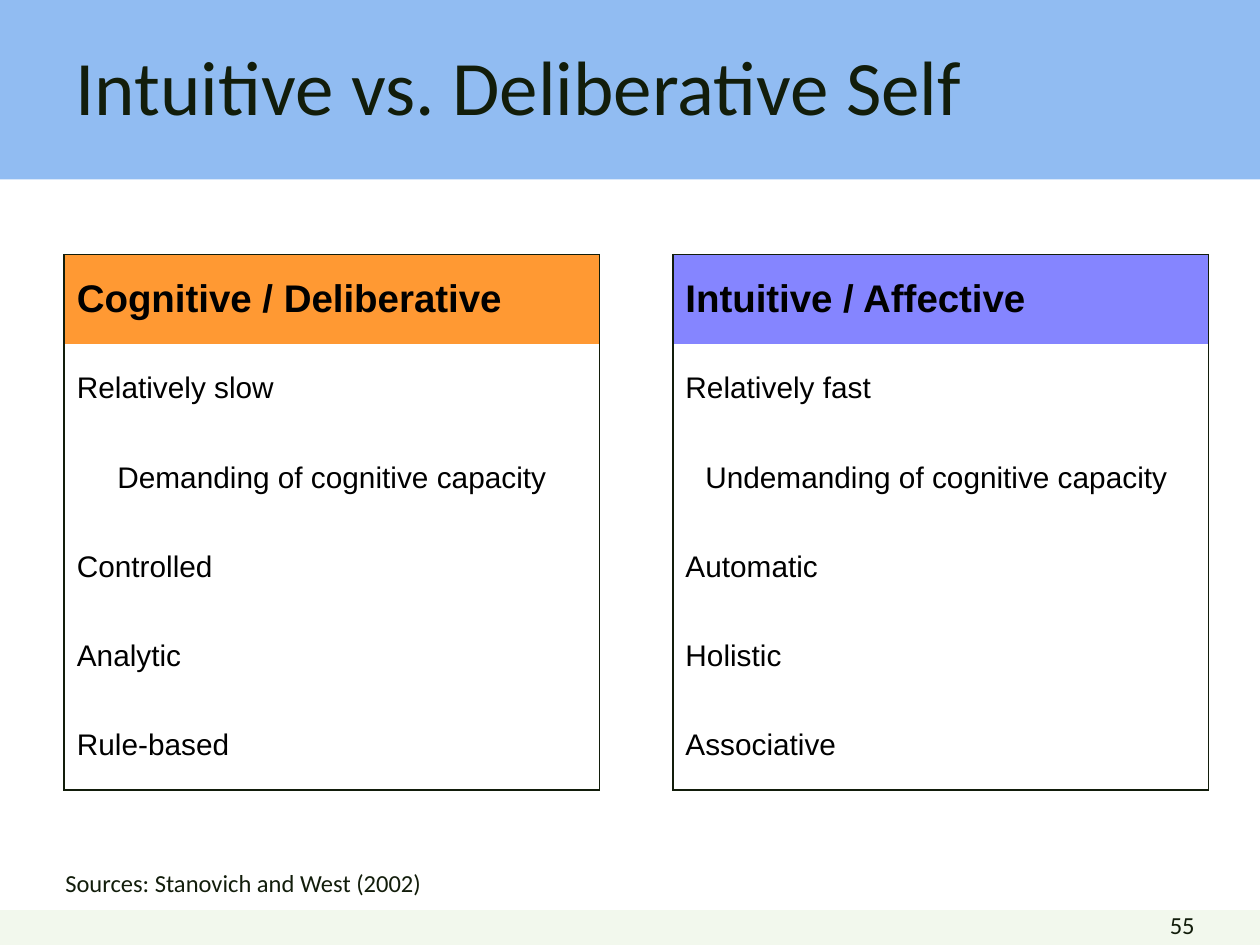
from lxml.etree import SubElement
from pptx import Presentation
from pptx.dml.color import RGBColor
from pptx.enum.shapes import MSO_SHAPE
from pptx.enum.text import MSO_ANCHOR, PP_ALIGN
from pptx.oxml import parse_xml
from pptx.oxml.ns import nsdecls, qn
from pptx.util import Inches, Pt

INK = "121D0B"


def paint(fill, color):
    fill.solid()
    fill.fore_color.rgb = RGBColor.from_string(color)


def style(tf, size, font="Calibri", color=INK, align=PP_ALIGN.LEFT, bold=False):
    p = tf.paragraphs[0]
    p.alignment = align
    r = p.runs[0]
    r.font.size, r.font.name, r.font.bold = Pt(size), font, bold
    paint(r.font.fill, color)


prs = Presentation()
prs.slide_width, prs.slide_height = Inches(10), Inches(7.5)
W, H = prs.slide_width, prs.slide_height
s = prs.slides.add_slide(prs.slide_layouts[5])

for top, height, color in [(0, 0.19, "91BCF2"), (0.963, 0.037, "F2F8ED")]:
    sp = s.shapes.add_shape(MSO_SHAPE.RECTANGLE, 0, int(H * top), W, int(H * height))
    sp.shadow.inherit = False
    paint(sp.fill, color)
    sp.line.fill.background()

title = s.shapes.title
title.left, title.top, title.width, title.height = map(Inches, (0.5, 0.28, 9.07, 0.79))
title.text_frame.text = "Intuitive vs. Deliberative Self"
title.text_frame.vertical_anchor = MSO_ANCHOR.MIDDLE
style(title.text_frame, 44)
title.element.getparent().append(title.element)

notes = [
    ("55", (7.25, 7.17, 2.33, 0.31), PP_ALIGN.RIGHT, MSO_ANCHOR.TOP),
    ("Sources: Stanovich and West (2002)", (0.42, 6.67, 4.34, 0.5), PP_ALIGN.LEFT, MSO_ANCHOR.BOTTOM),
]
for text, box, align, anchor in notes:
    tf = s.shapes.add_textbox(*map(Inches, box)).text_frame
    tf.word_wrap = True
    tf.vertical_anchor = anchor
    tf.text = text
    style(tf, 14, align=align)

SIDE, GAP = 4.25, 0.5
tables = [
    (0.51, [SIDE], "FF9933", 100, [
        "Cognitive / Deliberative", "Relatively slow", "Demanding of cognitive capacity",
        "Controlled", "Analytic", "Rule-based"]),
    (4.84, [GAP, SIDE], "0000FF", 48, [
        "Intuitive / Affective", "Relatively fast", "Undemanding of cognitive capacity ",
        "Automatic", "Holistic", "Associative"]),
]
for left, widths, color, opacity, texts in tables:
    rows, last = len(texts), len(widths) - 1
    frame = s.shapes.add_table(rows, len(widths), Inches(left), Inches(2.02), Inches(sum(widths)), Inches(SIDE))
    table = frame.table
    table.first_row = table.horz_banding = False
    for column, width in zip(table.columns, widths):
        column.width = Inches(width)
    for i, text in enumerate(texts):
        for j in range(len(widths)):
            cell = table.cell(i, j)
            cell.fill.background()
            edges = "R"
            if j == last:
                edges = "LR" + "T" * (i == 0) + "B" * (i == rows - 1)
                cell.vertical_anchor = MSO_ANCHOR.MIDDLE
                cell.text_frame.text = text
                align = PP_ALIGN.CENTER if i == 2 else PP_ALIGN.LEFT
                style(cell.text_frame, 17 if i else 22, "Arial", "000000", align, i == 0)
                if i == 0:
                    paint(cell.fill, color)
            tcPr = cell._tc.get_or_add_tcPr()
            if i == 0 and j == last and opacity < 100:
                SubElement(tcPr.find(".//" + qn("a:srgbClr")), qn("a:alpha"), val=str(opacity * 1000))
            for k, edge in enumerate("LRTB"):
                ink = f'<a:solidFill><a:srgbClr val="{INK}"/></a:solidFill>' if edge in edges else "<a:noFill/>"
                tcPr.insert(k, parse_xml(f'<a:ln{edge} {nsdecls("a")} w="12700">{ink}</a:ln{edge}>'))

prs.save("out.pptx")
